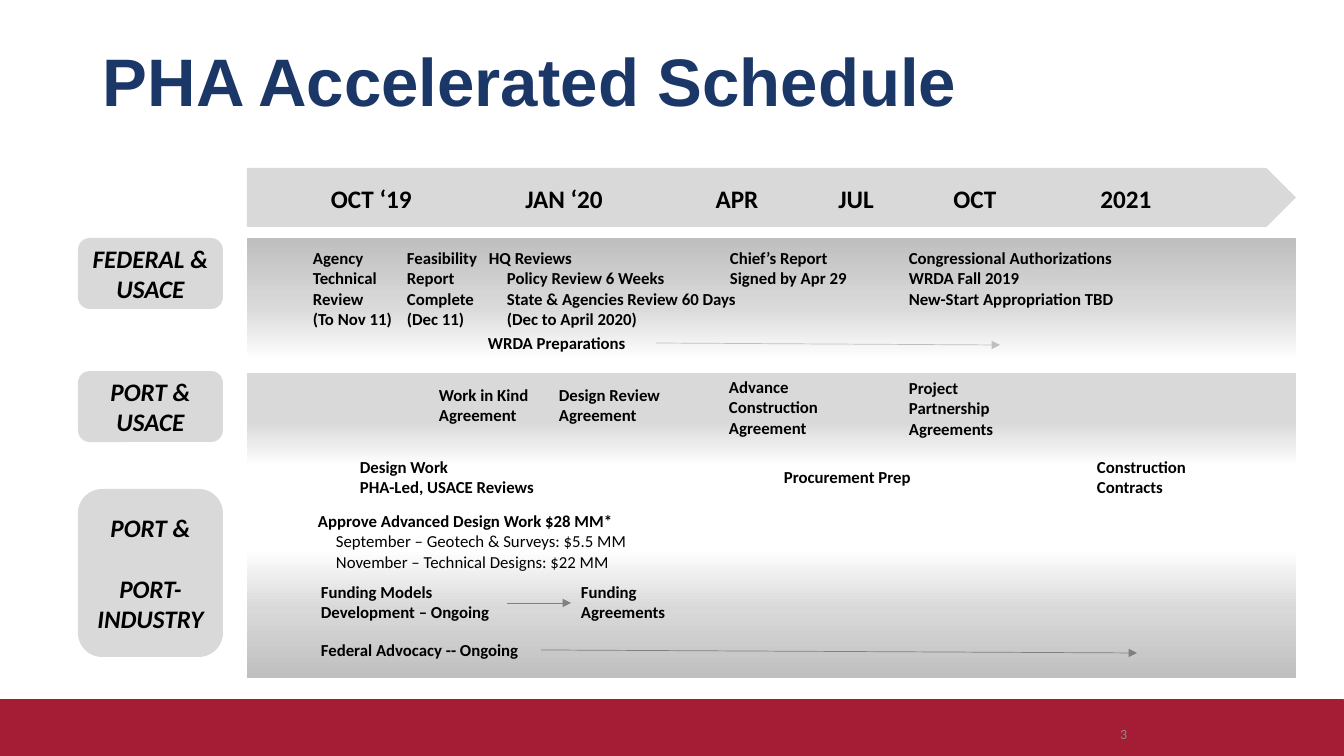
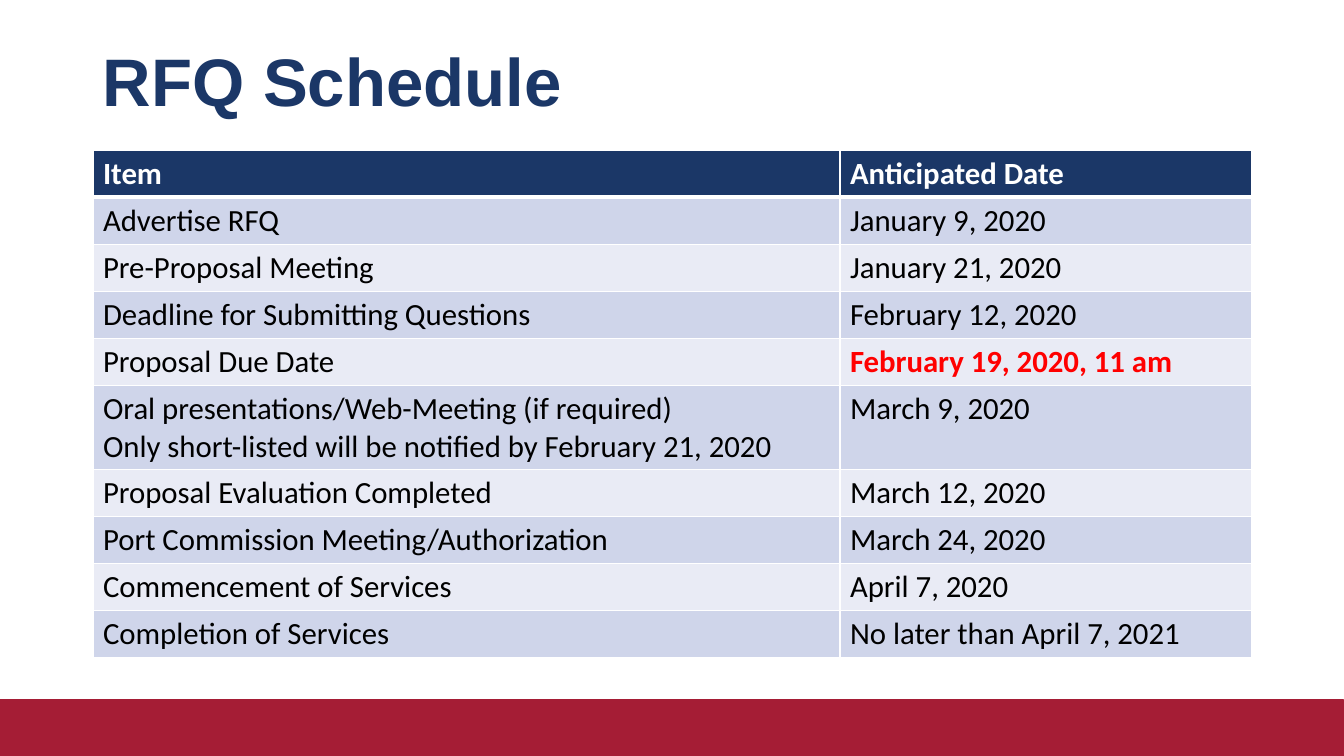
from copy import deepcopy

from lxml import etree
from pptx import Presentation
from pptx.dml.color import RGBColor
from pptx.enum.shapes import MSO_CONNECTOR, MSO_SHAPE
from pptx.enum.text import MSO_ANCHOR, PP_ALIGN
from pptx.oxml.ns import qn
from pptx.util import Emu, Pt

NAVY = RGBColor(0x1B, 0x37, 0x67)
CRIMSON = RGBColor(0xA5, 0x1D, 0x35)
RED = RGBColor(0xFF, 0x00, 0x00)
BLACK = RGBColor(0x00, 0x00, 0x00)
WHITE = RGBColor(0xFF, 0xFF, 0xFF)
LIGHT_GRAY = RGBColor(0xD9, 0xD9, 0xD9)
MID_GRAY = RGBColor(0xBF, 0xBF, 0xBF)
DARK_GRAY = RGBColor(0x80, 0x80, 0x80)
NUMBER_GRAY = RGBColor(0x8C, 0x8C, 0x8C)
ROW_DARK = RGBColor(0xCF, 0xD5, 0xEA)
ROW_LIGHT = RGBColor(0xE9, 0xEB, 0xF5)

RECT = MSO_SHAPE.RECTANGLE
ROUNDED = MSO_SHAPE.ROUNDED_RECTANGLE
PENTAGON = MSO_SHAPE.PENTAGON
STRAIGHT = MSO_CONNECTOR.STRAIGHT
LEFT, CENTER, RIGHT = PP_ALIGN.LEFT, PP_ALIGN.CENTER, PP_ALIGN.RIGHT
TOP, MIDDLE = MSO_ANCHOR.TOP, MSO_ANCHOR.MIDDLE

SLIDE_W, SLIDE_H = 1344, 756
LANE_X, LANE_W = 247, 1049
INDENT = 18
DOWN, UP = 270, 90  # gradient directions, counter-clockwise degrees

MONTHS = [  # x, width, label
    (321, 138, "OCT ‘19"), (501, 126, "JAN ‘20"), (696, 82, "APR"),
    (816, 80, "JUL"), (934, 82, "OCT"), (1084, 84, "2021"),
]
LANES = [  # y, height, gradient direction, gradient stops
    (238, 126, DOWN, [(0, MID_GRAY), (0.54, LIGHT_GRAY), (0.97, WHITE)]),
    (373, 96, DOWN, [(0, LIGHT_GRAY), (0.5, LIGHT_GRAY), (0.98, WHITE)]),
    (491, 187, UP, [(0, MID_GRAY), (0.37, LIGHT_GRAY), (0.69, WHITE)]),
]
LANE_LABELS = [  # y, height, paragraphs
    (238, 71, ["FEDERAL & USACE"]),
    (371, 71, ["PORT & USACE"]),
    (489, 168, ["PORT &", ("PORT-INDUSTRY", {"before": 22})]),
]
SUB = {"indent": INDENT}
PLAIN_SUB = {"indent": INDENT, "bold": False}
NOTES = [  # x, y, width, paragraphs
    # Federal lane
    (303, 243, 106, ["Agency Technical Review", "(To Nov 11)"]),
    (397, 243, 106, ["Feasibility Report Complete", "(Dec 11)"]),
    (479, 243, 283, ["HQ Reviews", ("Policy Review 6 Weeks", SUB),
                     ("State & Agencies Review 60 Days", SUB),
                     ("(Dec to April 2020)", SUB)]),
    (720, 243, 142, ["Chief’s Report Signed by Apr 29"]),
    (899, 243, 227, ["Congressional Authorizations WRDA Fall 2019",
                     "New-Start Appropriation TBD"]),
    (478, 328, 178, ["WRDA Preparations"]),
    # Port and federal lane
    (429, 380, 129, ["Work in Kind", "Agreement"]),
    (549, 380, 129, ["Design Review", "Agreement"]),
    (719, 372, 129, ["Advance Construction", "Agreement"]),
    (899, 373, 129, ["Project Partnership Agreements"]),
    # Between the lanes
    (350, 452, 231, ["Design Work", "PHA-Led, USACE Reviews"]),
    (774, 462, 177, ["Procurement Prep"]),
    (1087, 452, 129, ["Construction Contracts"]),
    # Port and industry lane
    (308, 506, 331, ["Approve Advanced Design Work $28 MM*",
                     ("September – Geotech & Surveys: $5.5 MM", PLAIN_SUB),
                     ("November – Technical Designs: $22 MM", PLAIN_SUB)]),
    (311, 577, 196, ["Funding Models Development – Ongoing"]),
    (571, 577, 138, ["Funding Agreements"]),
    (311, 635, 227, ["Federal Advocacy -- Ongoing"]),
]
ARROWS = [  # start, end, colour
    ((656, 343), (1000, 345), MID_GRAY),
    ((507, 603), (571, 603), DARK_GRAY),
    ((541, 650), (1137, 653), DARK_GRAY),
]
RFQ_ROWS = [
    (["Item"], "Anticipated Date"),
    (["Advertise RFQ"], "January 9, 2020"),
    (["Pre-Proposal Meeting"], "January 21, 2020"),
    (["Deadline for Submitting Questions"], "February 12, 2020"),
    (["Proposal Due Date"], "February 19, 2020, 11 am"),
    (["Oral presentations/Web-Meeting (if required)",
      "Only short-listed will be notified by February 21, 2020"],
     "March 9, 2020"),
    (["Proposal Evaluation Completed"], "March 12, 2020"),
    (["Port Commission Meeting/Authorization"], "March 24, 2020"),
    (["Commencement of Services"], "April 7, 2020"),
    (["Completion of Services"], "No later than April 7, 2021"),
]
DUE_ROW = 4


def px(n):
    return Emu(round(n * 914400 / 100.8))


def box(x, y, w, h):
    return px(x), px(y), px(w), px(h)


def format_paragraph(p, text, size=12, font="Calibri", color=BLACK, bold=False,
                     italic=False, align=LEFT, indent=0, before=0, spacing=None):
    if indent:
        p._p.get_or_add_pPr().set("marL", str(px(indent)))
    if before:
        p.space_before = Pt(before)
    if spacing:
        p.line_spacing = spacing
    p.alignment = align
    r = p.add_run()
    r.text = text
    r.font.size, r.font.name = Pt(size), font
    r.font.bold, r.font.italic = bold, italic
    r.font.color.rgb = color


def write(tf, paragraphs, **fmt):
    """Fill a text frame; an item is a string or (string, format changes)."""
    tf.word_wrap = True
    for i, item in enumerate(paragraphs):
        text, changes = (item, {}) if isinstance(item, str) else item
        p = tf.add_paragraph() if i else tf.paragraphs[0]
        format_paragraph(p, text, **{**fmt, **changes})


def add_text(slide, bounds, paragraphs, anchor=TOP, **fmt):
    tf = slide.shapes.add_textbox(*box(*bounds)).text_frame
    tf.vertical_anchor = anchor
    write(tf, paragraphs, **fmt)


def add_shape(slide, kind, bounds, fill=None):
    s = slide.shapes.add_shape(kind, *box(*bounds))
    s.shadow.inherit = False
    s.line.fill.background()
    if fill is not None:
        s.fill.solid()
        s.fill.fore_color.rgb = fill
    return s


def add_lane(slide, y, h, angle, stops):
    s = add_shape(slide, RECT, (LANE_X, y, LANE_W, h))
    s.fill.gradient()
    s.fill.gradient_angle = angle
    stop_list = s._element.spPr.find(".//" + qn("a:gsLst"))
    stop_list.append(deepcopy(stop_list[-1]))
    for stop, (position, color) in zip(s.fill.gradient_stops, stops):
        stop.position = position
        stop.color.rgb = color


def add_arrow(slide, start, end, color):
    s = slide.shapes.add_connector(STRAIGHT, *map(px, start + end))
    s.line.color.rgb = color
    s.line.width = Pt(0.5)
    etree.SubElement(s.line._get_or_add_ln(), qn("a:tailEnd"), type="triangle")
    etree.SubElement(s._element.spPr, qn("a:effectLst"))


def set_borders(cell, bottom):
    tc_pr = cell._tc.get_or_add_tcPr()
    for i, (side, width) in enumerate(zip("LRTB", (1, 1, 1, bottom))):
        ln = etree.Element(qn("a:ln" + side), w=str(Pt(width)))
        fill = etree.SubElement(ln, qn("a:solidFill"))
        etree.SubElement(fill, qn("a:srgbClr"), val=str(WHITE))
        tc_pr.insert(i, ln)  # borders precede the cell fill


def add_schedule_table(slide, rows):
    heights = [47 if len(items) == 1 else 84 for items, _ in rows]
    frame = slide.shapes.add_table(len(rows), 2, *box(93, 150, 1159, sum(heights)))
    table = frame.table
    for column, width in zip(table.columns, (747, 412)):
        column.width = px(width)
    for i, (items, date) in enumerate(rows):
        table.rows[i].height = px(heights[i])
        header = i == 0
        row_fill = NAVY if header else (ROW_DARK if i % 2 else ROW_LIGHT)
        for j, paragraphs in enumerate((items, [date])):
            cell = table.cell(i, j)
            cell.fill.solid()
            cell.fill.fore_color.rgb = row_fill
            set_borders(cell, bottom=3 if header else 1)
            due = i == DUE_ROW and j == 1
            color = WHITE if header else RED if due else BLACK
            write(cell.text_frame, paragraphs, size=22, color=color,
                  bold=header or due)


def new_slide(prs, title):
    """Blank slide with the shared footer band and title."""
    slide = prs.slides.add_slide(prs.slide_layouts[6])
    band = add_shape(slide, RECT, (0, 700, SLIDE_W, SLIDE_H - 700), CRIMSON)
    band.line.color.rgb = CRIMSON
    band.line.width = Pt(0.75)
    add_text(slide, (93, 40, 1159, 90), [title], anchor=MIDDLE, size=48,
             font="Arial", color=NAVY, bold=True, spacing=0.9)
    return slide


def build_timeline(prs):
    slide = new_slide(prs, "PHA Accelerated Schedule")
    # Lanes and time axis
    for lane in LANES:
        add_lane(slide, *lane)
    add_shape(slide, PENTAGON, (LANE_X, 168, LANE_W, 59), LIGHT_GRAY)
    for x, w, label in MONTHS:
        add_text(slide, (x, 178, w, 40), [label], size=18, bold=True,
                 align=LEFT if x == MONTHS[0][0] else CENTER)
    # Lane labels
    for y, h, paragraphs in LANE_LABELS:
        s = add_shape(slide, ROUNDED, (78, y, 145, h), LIGHT_GRAY)
        s.text_frame.vertical_anchor = MIDDLE
        write(s.text_frame, paragraphs, size=18, bold=True, italic=True,
              align=CENTER)
    # Milestones
    for x, y, w, paragraphs in NOTES:
        add_text(slide, (x, y, w, 10 + 20 * len(paragraphs)), paragraphs, bold=True)
    for arrow in ARROWS:
        add_arrow(slide, *arrow)
    # Slide number
    add_text(slide, (910, 714, 227, 40), ["3"], anchor=MIDDLE, size=10,
             color=NUMBER_GRAY, align=RIGHT)


def build_rfq(prs):
    slide = new_slide(prs, "RFQ Schedule")
    add_schedule_table(slide, RFQ_ROWS)


def main():
    prs = Presentation()
    prs.slide_width, prs.slide_height = px(SLIDE_W), px(SLIDE_H)
    build_timeline(prs)
    build_rfq(prs)
    prs.save("out.pptx")


if __name__ == "__main__":
    main()
